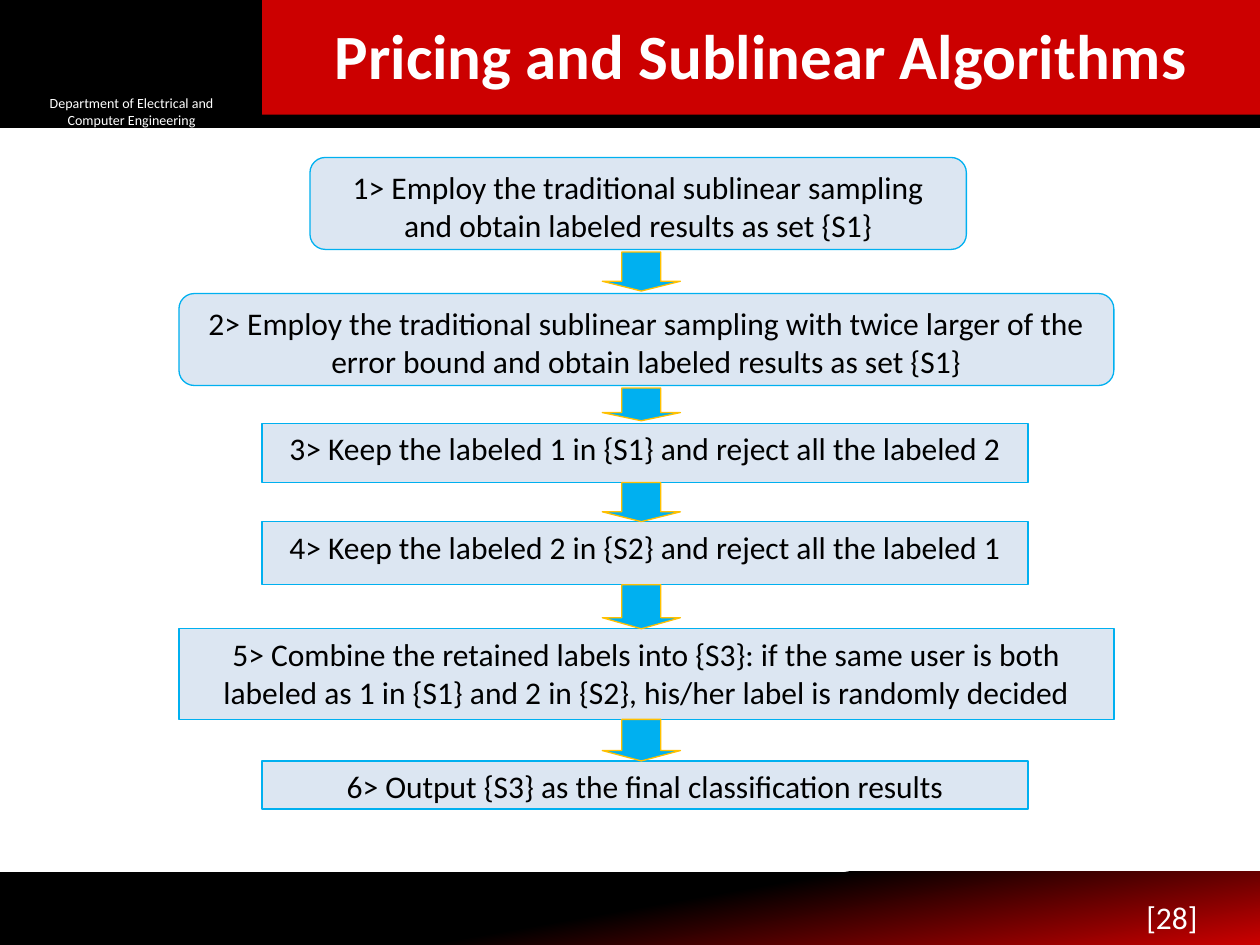
"""Build the slide that shows the six steps of the sublinear pricing algorithm."""
import pptx
import pptx.util
import pptx.dml.color
import pptx.enum.shapes
import pptx.enum.text

Inches = pptx.util.Inches
SHAPE = pptx.enum.shapes.MSO_SHAPE
ALIGN = pptx.enum.text.PP_ALIGN
ANCHOR = pptx.enum.text.MSO_ANCHOR

TITLE = "Pricing and Sublinear Algorithms"
DEPARTMENT = "Department of Electrical and Computer Engineering"
PAGE = "[28]"
ROUNDED, SQUARE = SHAPE.FLOWCHART_ALTERNATE_PROCESS, SHAPE.FLOWCHART_PROCESS

STEPS = [
    ("1> Employ the traditional sublinear sampling and obtain labeled results as set {S1}",
     ROUNDED, (2.46, 1.25, 5.21, 0.73)),
    ("2> Employ the traditional sublinear sampling with twice larger of the error bound "
     "and obtain labeled results as set {S1}",
     ROUNDED, (1.42, 2.33, 7.42, 0.73)),
    ("3> Keep the labeled 1 in {S1} and reject all the labeled 2",
     SQUARE, (2.08, 3.36, 6.08, 0.47)),
    ("4> Keep the labeled 2 in {S2} and reject all the labeled 1",
     SQUARE, (2.08, 4.14, 6.08, 0.5)),
    ("5> Combine the retained labels into {S3}: if the same user is both labeled as 1 "
     "in {S1} and 2 in {S2}, his/her label is randomly decided",
     SQUARE, (1.42, 4.99, 7.42, 0.72)),
    ("6> Output {S3} as the final classification results",
     SQUARE, (2.08, 6.04, 6.08, 0.38)),
]
ARROW_LEFT, ARROW_WIDTH, ARROW_GAP = 4.78, 0.62, 0.02

THEME = {
    "font": "Calibri",
    "black": "000000", "white": "FFFFFF", "red": "CC0000",
    "step": "DCE6F2", "accent": "00B0F0", "arrow_edge": "FFC000",
    "title_size": 36, "body_size": 18, "small_size": 8, "edge": 0.75,
}


def color(name):
    return pptx.dml.color.RGBColor.from_string(THEME[name])


def place(shape, box):
    shape.left, shape.top, shape.width, shape.height = map(Inches, box)


def write(shape, text, size, ink, align=ALIGN.CENTER, anchor=ANCHOR.TOP, bold=False):
    frame = shape.text_frame
    frame.text = text
    frame.word_wrap = True
    frame.auto_size = pptx.enum.text.MSO_AUTO_SIZE.NONE
    frame.vertical_anchor = anchor
    paragraph = frame.paragraphs[0]
    paragraph.alignment = align
    font = paragraph.runs[0].font
    font.name, font.bold = THEME["font"], bold
    font.size = pptx.util.Pt(THEME[size])
    font.color.rgb = color(ink)
    return paragraph


def add_block(slide, kind, box, fill, edge=None):
    block = slide.shapes.add_shape(kind, *map(Inches, box))
    block.shadow.inherit = False
    block.fill.solid()
    block.fill.fore_color.rgb = color(fill)
    if edge:
        block.line.color.rgb = color(edge)
        block.line.width = pptx.util.Pt(THEME["edge"])
    else:
        block.line.fill.background()
    return block


def add_frame(slide):
    footer = add_block(slide, SHAPE.RECTANGLE, (0, 6.92, 10, 0.58), "black")
    footer.fill.gradient()
    footer.fill.gradient_angle = 280
    for stop, position, name in zip(footer.fill.gradient_stops, (0.5, 1), ("black", "red")):
        stop.position = position
        stop.color.rgb = color(name)
    header = add_block(slide, SHAPE.RECTANGLE, (0, 0, 10, 1), "black", "black")
    header.line.width = pptx.util.Pt(2)
    add_block(slide, SHAPE.RECTANGLE, (2.08, 0, 7.92, 0.91), "red")
    department = add_block(slide, SHAPE.RECTANGLE, (0.17, 0.76, 1.75, 0.25), "black")
    write(department, DEPARTMENT, "small_size", "white", anchor=ANCHOR.MIDDLE)
    page = slide.shapes.add_textbox(*map(Inches, (9, 7.08, 0.66, 0.33)))
    write(page, PAGE, "body_size", "white", align=ALIGN.LEFT)


def add_title(slide):
    title = slide.shapes.title
    place(title, (2.08, 0.08, 7.92, 0.64))
    write(title, TITLE, "title_size", "white", bold=True)
    slide.shapes._spTree.append(title._element)


def add_steps(slide):
    for text, kind, box in STEPS:
        step = add_block(slide, kind, box, "step", "accent")
        paragraph = write(step, text, "body_size", "black")
        paragraph.space_after = pptx.util.Pt(10)


def add_arrows(slide):
    for (_, kind, upper), (_, _, lower) in zip(STEPS, STEPS[1:]):
        gap = ARROW_GAP if kind == ROUNDED else 0
        top = upper[1] + upper[3] + gap
        box = (ARROW_LEFT, top, ARROW_WIDTH, lower[1] - gap - top)
        arrow = add_block(slide, SHAPE.DOWN_ARROW, box, "accent", "arrow_edge")
        arrow.adjustments[1] = 0.25


def main():
    deck = pptx.Presentation()
    deck.slide_width, deck.slide_height = Inches(10), Inches(7.5)
    slide = deck.slides.add_slide(deck.slide_layouts[5])
    add_frame(slide)
    add_title(slide)
    add_steps(slide)
    add_arrows(slide)
    deck.save("out.pptx")


if __name__ == "__main__":
    main()
